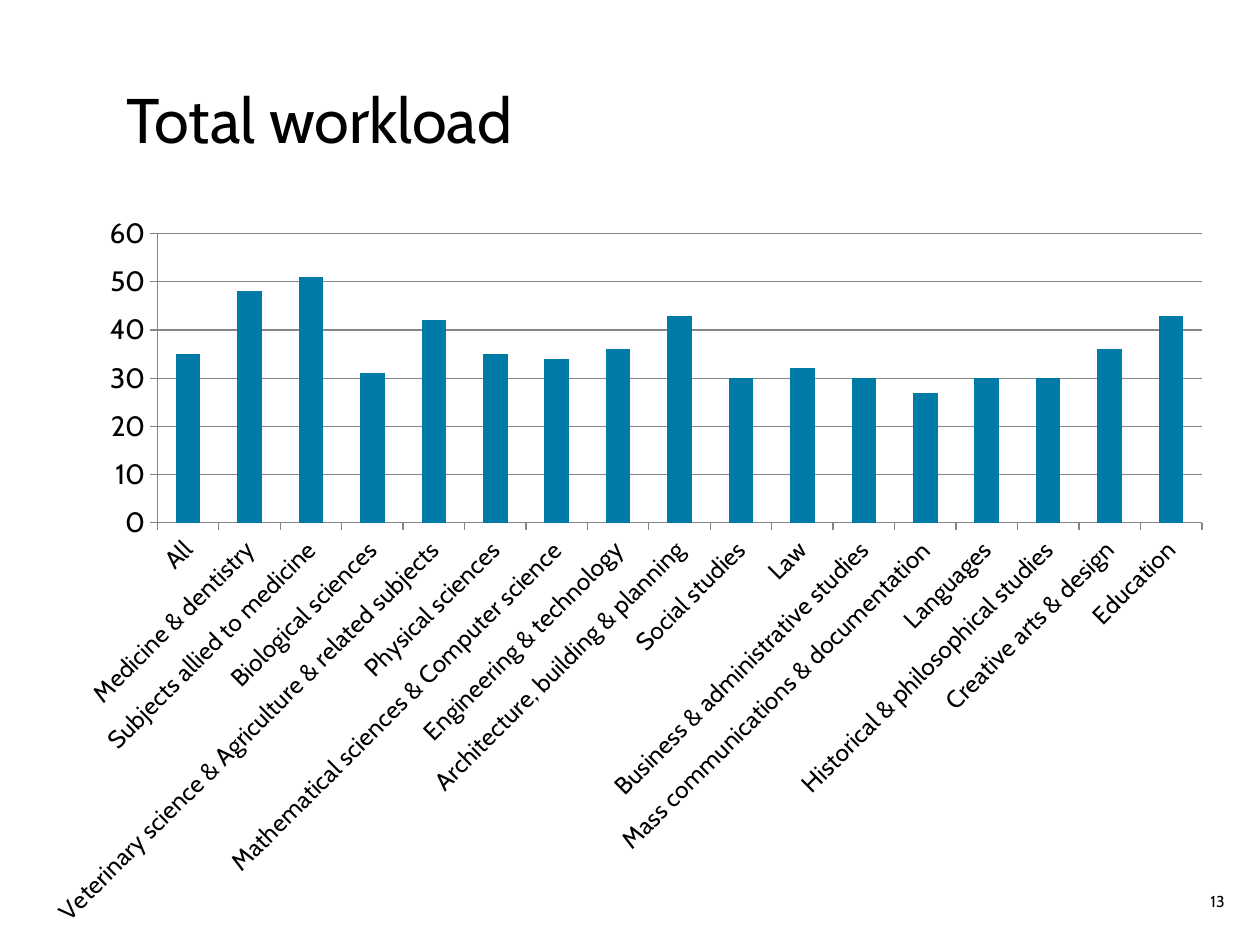
import pptx
import pptx.chart.data
import pptx.dml.color
import pptx.enum.chart
import pptx.enum.text
import pptx.oxml
import pptx.oxml.ns
import pptx.util

FONT = "Cabin"
BLACK, BLUE, GREY = "000000", "007AA6", "868686"

WORKLOAD = [
    ("All", 35),
    ("Medicine & dentistry", 48),
    ("Subjects allied to medicine", 51),
    ("Biological sciences", 31),
    ("Veterinary science & Agriculture & related subjects", 42),
    ("Physical sciences", 35),
    ("Mathematical sciences & Computer science", 34),
    ("Engineering & technology", 36),
    ("Architecture, building & planning", 43),
    ("Social studies", 30),
    ("Law", 32),
    ("Business & administrative studies", 30),
    ("Mass communications & documentation", 27),
    ("Languages", 30),
    ("Historical & philosophical studies", 30),
    ("Creative arts & design", 36),
    ("Education", 43),
]


def rgb(value):
    return pptx.dml.color.RGBColor.from_string(value)


class Deck:
    """Holds the presentation, the current slide and the shared style."""

    def __init__(self, width, height):
        self.prs = pptx.Presentation()
        self.prs.slide_width = pptx.util.Inches(width)
        self.prs.slide_height = pptx.util.Inches(height)

    def add_slide(self):
        self.s = self.prs.slides.add_slide(self.prs.slide_layouts[5])
        fill = self.s.background.fill
        fill.solid()
        fill.fore_color.rgb = rgb("FFFFFF")

    def box(self, x, y, w, h):
        """Turn shares of the slide's size into lengths."""
        sizes = (self.prs.slide_width, self.prs.slide_height) * 2
        return [round(share * size) for share, size in zip((x, y, w, h), sizes)]

    def style(self, font, size):
        font.name = FONT
        font.size = pptx.util.Pt(size)
        font.bold = False
        font.color.rgb = rgb(BLACK)

    def add_text(self, sp, text, size, align, anchor):
        tf = sp.text_frame
        tf.word_wrap = True
        tf.auto_size = pptx.enum.text.MSO_AUTO_SIZE.NONE
        tf.vertical_anchor = anchor
        p = tf.paragraphs[0]
        p.alignment = align
        r = p.add_run()
        r.text = text
        self.style(r.font, size)
        return tf

    def title(self, text, *area):
        sp = self.s.shapes.title
        sp.left, sp.top, sp.width, sp.height = self.box(*area)
        self.add_text(sp, text, 36, pptx.enum.text.PP_ALIGN.LEFT,
                      pptx.enum.text.MSO_ANCHOR.BOTTOM)

    def page_number(self, text, *area):
        sp = self.s.shapes.add_textbox(*self.box(*area))
        tf = self.add_text(sp, text, 9, pptx.enum.text.PP_ALIGN.RIGHT,
                           pptx.enum.text.MSO_ANCHOR.MIDDLE)
        tf.margin_right = 0

    def column_chart(self, rows, *area):
        data = pptx.chart.data.CategoryChartData()
        data.categories = [name for name, _ in rows]
        data.add_series("Series 1", [value for _, value in rows])
        kind = pptx.enum.chart.XL_CHART_TYPE.COLUMN_CLUSTERED
        chart = self.s.shapes.add_chart(kind, *self.box(*area), data).chart
        chart.has_legend = False
        chart.has_title = False
        self.style(chart.font, 10)
        plot = chart.plots[0]
        plot.gap_width = 150
        plot.vary_by_categories = False
        fill = plot.series[0].format.fill
        fill.solid()
        fill.fore_color.rgb = rgb(BLUE)
        self.axis(chart.category_axis, 14)
        self.axis(chart.value_axis, 16)
        self.slant_labels(chart.category_axis)
        self.scale(chart.value_axis, 60, 10)
        self.place_plot(chart, x=0.11, y=0.04, w=0.87, h=0.39)

    def axis(self, axis, size):
        self.style(axis.tick_labels.font, size)
        axis.major_tick_mark = pptx.enum.chart.XL_TICK_MARK.OUTSIDE
        self.line(axis.format.line)

    def line(self, line):
        line.color.rgb = rgb(GREY)
        line.width = pptx.util.Pt(0.75)

    def scale(self, axis, top, step):
        axis.minimum_scale, axis.maximum_scale = 0, top
        axis.major_unit = step
        axis.has_major_gridlines = True
        self.line(axis.major_gridlines.format.line)

    def slant_labels(self, axis):
        body = axis._element.find(".//" + pptx.oxml.ns.qn("a:bodyPr"))
        body.set("rot", "-2700000")
        body.set("vert", "horz")

    def place_plot(self, chart, **shares):
        """Fix the inner plot area, in shares of the chart's size."""
        area = chart._chartSpace.find(".//" + pptx.oxml.ns.qn("c:plotArea"))
        for old in area.findall(pptx.oxml.ns.qn("c:layout")):
            area.remove(old)
        modes = "".join(f'<c:{k}Mode val="edge"/>' for k in "xy")
        places = "".join(f'<c:{k} val="{v}"/>' for k, v in shares.items())
        area.insert(0, pptx.oxml.parse_xml(
            f'<c:layout {pptx.oxml.ns.nsdecls("c")}><c:manualLayout>'
            f'<c:layoutTarget val="inner"/>{modes}{places}'
            '</c:manualLayout></c:layout>'))


def main():
    deck = Deck(10, 7.5)
    deck.add_slide()
    deck.page_number("13", 0.925, 0.927, 0.047, 0.053)
    deck.title("Total workload", 0.09, 0.07, 0.756, 0.102)
    deck.column_chart(WORKLOAD, 0.02, 0.216, 0.953, 0.784)
    deck.prs.save("out.pptx")


if __name__ == "__main__":
    main()
